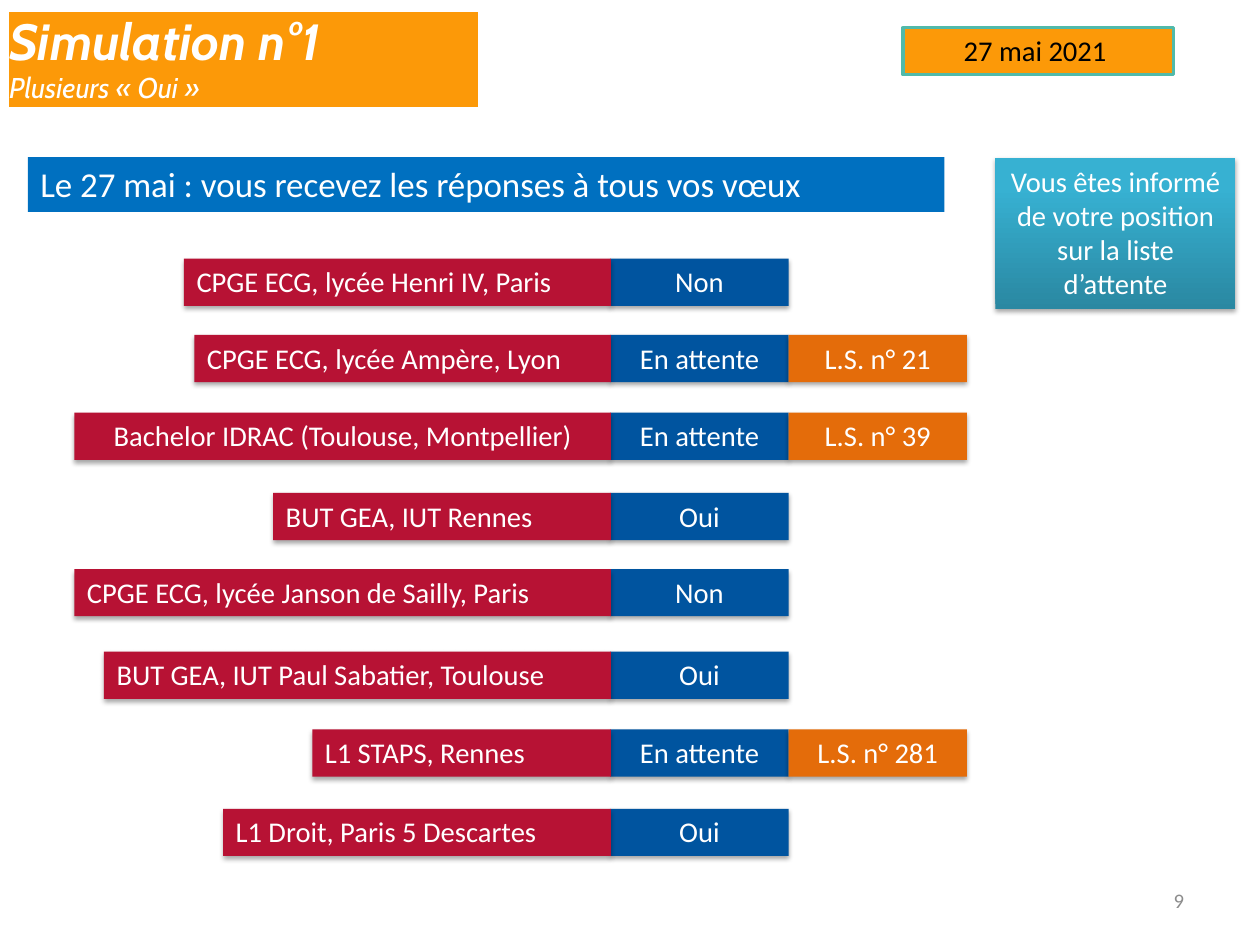
import lxml.etree
import pptx
import pptx.dml.color
import pptx.enum.shapes
import pptx.enum.text
import pptx.oxml.ns
import pptx.util

Pt = pptx.util.Pt
RGBColor = pptx.dml.color.RGBColor
ALIGN = pptx.enum.text.PP_ALIGN
ANCHOR = pptx.enum.text.MSO_ANCHOR
qn = pptx.oxml.ns.qn

WHITE = RGBColor(0xFF, 0xFF, 0xFF)
BLACK = RGBColor(0x00, 0x00, 0x00)
GREY = RGBColor(0x8C, 0x8C, 0x8C)
AMBER = RGBColor(0xFC, 0x99, 0x08)
TEAL = RGBColor(0x51, 0xBA, 0xAA)
BRIGHT_BLUE = RGBColor(0x00, 0x70, 0xC0)
DARK_BLUE = RGBColor(0x00, 0x54, 0x9F)
CRIMSON = RGBColor(0xB7, 0x12, 0x34)
ORANGE = RGBColor(0xE4, 0x6C, 0x0A)
DEEP_CYAN = RGBColor(0x2A, 0x88, 0xA2)
LIGHT_CYAN = RGBColor(0x37, 0xB1, 0xD2)

WISHES = [
    (0, "CPGE ECG, lycée Henri IV, Paris", 269, ALIGN.LEFT, "Non", None),
    (48, "CPGE ECG, lycée Ampère, Lyon", 262.5, ALIGN.LEFT, "En attente", "L.S. n° 21"),
    (97, "Bachelor IDRAC (Toulouse, Montpellier)", 338, ALIGN.CENTER, "En attente",
     "L.S. n° 39"),
    (147.5, "BUT GEA, IUT Rennes", 212.8, ALIGN.LEFT, "Oui", None),
    (195.5, "CPGE ECG, lycée Janson de Sailly, Paris", 338, ALIGN.LEFT, "Non", None),
    (247.5, "BUT GEA, IUT Paul Sabatier, Toulouse", 319.4, ALIGN.LEFT, "Oui", None),
    (296.5, "L1 STAPS, Rennes", 188.2, ALIGN.LEFT, "En attente", "L.S. n° 281"),
    (346.5, "L1 Droit, Paris 5 Descartes", 244.4, ALIGN.LEFT, "Oui", None),
]


def write(frame, text, size=18, color=WHITE, align=ALIGN.CENTER, anchor=ANCHOR.TOP):
    """Fill a text frame with one formatted paragraph."""
    frame.word_wrap = True
    frame.vertical_anchor = anchor
    frame.margin_left = frame.margin_right = Pt(7.9)
    frame.margin_top = frame.margin_bottom = Pt(3.6)
    frame.text = text
    paragraph = frame.paragraphs[0]
    paragraph.alignment = align
    font = paragraph.runs[0].font
    font.name, font.size, font.color.rgb = "Calibri", Pt(size), color


def add_panel(slide, box, fill, text, **style):
    """Draw a flat, borderless rectangle holding text."""
    panel = slide.shapes.add_shape(
        pptx.enum.shapes.MSO_SHAPE.RECTANGLE, *(Pt(length) for length in box))
    panel.fill.solid()
    panel.fill.fore_color.rgb = fill
    panel.line.fill.background()
    panel.shadow.inherit = False
    write(panel.text_frame, text, **style)
    return panel


def add_raised_panel(slide, box, fill, text, **style):
    """Draw a panel with a soft shadow beneath it."""
    panel = add_panel(slide, box, fill, text, **style)
    effects = panel._element.spPr.find(qn("a:effectLst"))
    shadow = lxml.etree.SubElement(
        effects, qn("a:outerShdw"), blurRad=str(Pt(3.1)), dist=str(Pt(1.8)),
        dir="5400000", rotWithShape="0")
    tint = lxml.etree.SubElement(shadow, qn("a:srgbClr"), val=str(BLACK))
    lxml.etree.SubElement(tint, qn("a:alpha"), val="35000")
    return panel


def place_title(slide, box):
    """Set the two-line heading in the title placeholder."""
    title = slide.shapes.title
    title.left, title.top, title.width, title.height = (Pt(length) for length in box)
    title.fill.solid()
    title.fill.fore_color.rgb = AMBER
    frame = title.text_frame
    frame.text = "Simulation n°1\nPlusieurs « Oui »"
    frame.word_wrap = True
    frame.auto_size = pptx.enum.text.MSO_AUTO_SIZE.NONE
    frame.vertical_anchor = ANCHOR.MIDDLE
    frame.margin_left = frame.margin_right = frame.margin_top = frame.margin_bottom = 0
    for paragraph, size, bold in zip(frame.paragraphs, (32, 18), (True, False)):
        paragraph.alignment = ALIGN.LEFT
        paragraph.line_spacing = 0.95
        paragraph.space_before = Pt(0)
        font = paragraph.runs[0].font
        font.name, font.size, font.color.rgb = "Cabin", Pt(size), WHITE
        font.bold, font.italic = bold, True


def place_date(slide, box):
    """Draw the outlined date label."""
    date = add_panel(slide, box, AMBER, "27 mai 2021 ", color=BLACK)
    date.line.color.rgb = TEAL
    date.line.width = Pt(2)


def place_note(slide, box):
    """Draw the shaded note about the waiting list."""
    note = add_raised_panel(
        slide, box, LIGHT_CYAN,
        "Vous êtes informé de votre position sur la liste d’attente")
    note.fill.gradient()
    note.fill.gradient_angle = 90
    for stop, color, position in zip(
            note.fill.gradient_stops, (DEEP_CYAN, LIGHT_CYAN), (0, 0.8)):
        stop.color.rgb = color
        stop.position = position


def place_wishes(slide, box):
    """Stack the wishes with their answers and waiting-list ranks."""
    left, top, width, row_height = box
    answer_width = 112.3
    rank_left = left + width - answer_width
    answer_left = rank_left - answer_width
    for offset, wish, wish_width, align, answer, rank in WISHES:
        row_top = top + offset
        add_raised_panel(
            slide, (answer_left, row_top, answer_width, row_height), DARK_BLUE, answer)
        add_raised_panel(
            slide, (answer_left - wish_width + 0.4, row_top, wish_width, row_height),
            CRIMSON, wish, align=align)
        if rank:
            add_raised_panel(
                slide, (rank_left, row_top, answer_width, row_height), ORANGE, rank)


def place_page_number(slide, box):
    """Write the page number at the lower right."""
    number = slide.shapes.add_textbox(*(Pt(length) for length in box))
    write(number.text_frame, "9", 13, GREY, ALIGN.RIGHT, ANCHOR.MIDDLE)


def main():
    """Build and save the slide."""
    deck = pptx.Presentation()
    deck.slide_width, deck.slide_height = Pt(793.7), Pt(595.28)
    slide = deck.slides.add_slide(deck.slide_layouts[5])
    place_title(slide, (5.8, 7.6, 295.2, 59.8))
    add_panel(slide, (17.5, 98.9, 577.4, 34.6), BRIGHT_BLUE,
              "Le 27 mai : vous recevez les réponses à tous vos vœux",
              size=22, align=ALIGN.LEFT)
    place_wishes(slide, (46.8, 163, 562.3, 29.7))
    place_date(slide, (568.8, 17.5, 170.6, 29.7))
    place_note(slide, (627.1, 99.4, 151.2, 95))
    place_page_number(slide, (568.8, 551.5, 185, 31.7))
    deck.save("out.pptx")


if __name__ == "__main__":
    main()
